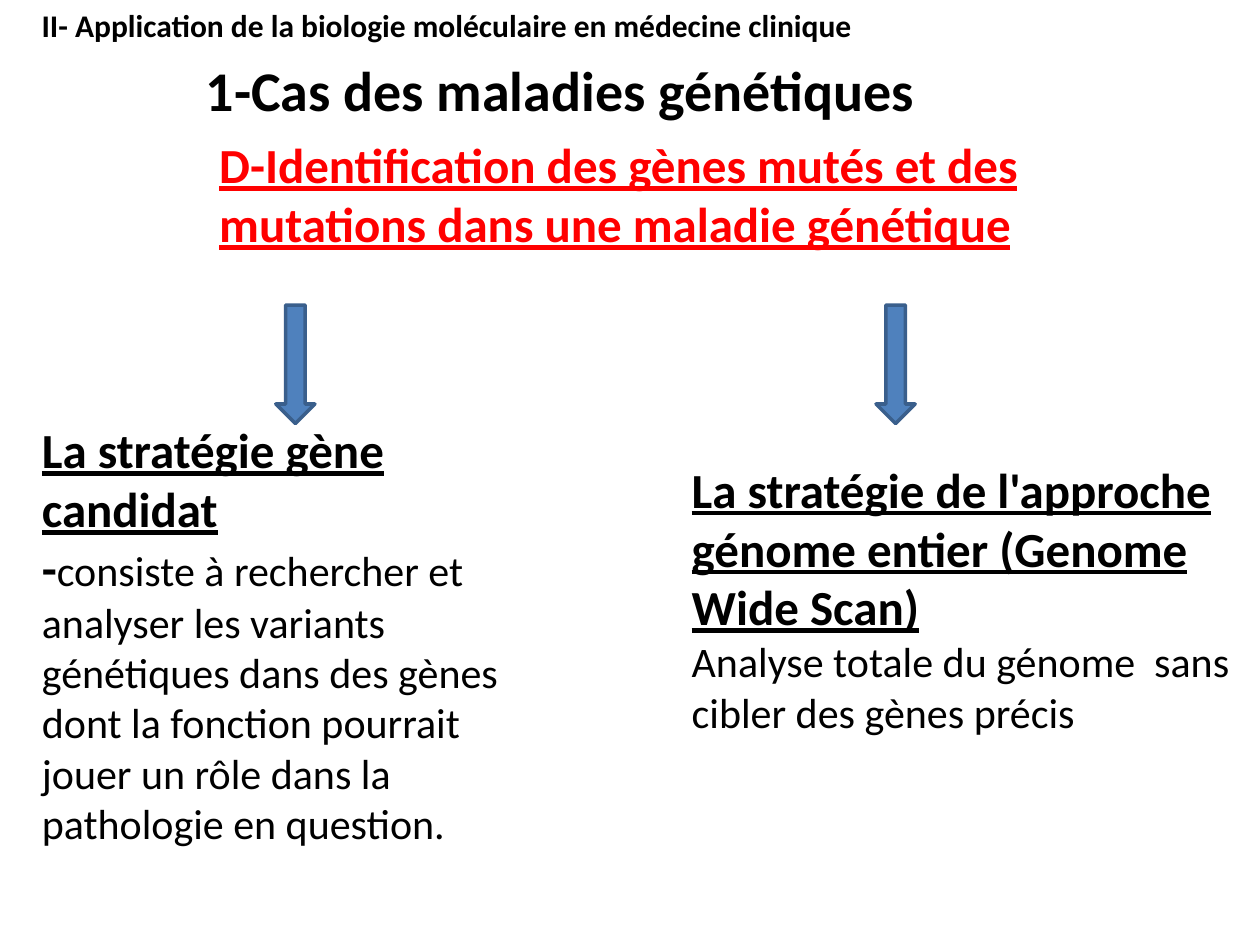
from dataclasses import dataclass

from lxml.etree import SubElement
from pptx import Presentation
from pptx.dml.color import RGBColor as Color
from pptx.enum.shapes import MSO_SHAPE as Preset
from pptx.enum.text import MSO_ANCHOR as Anchor, MSO_AUTO_SIZE as AutoSize, PP_ALIGN as Align
from pptx.oxml.ns import qn
from pptx.util import Cm, Pt


@dataclass(frozen=True)
class Theme:
    font: str = "Calibri"
    text: Color = Color(0x00, 0x00, 0x00)
    accent: Color = Color(0xFF, 0x00, 0x00)
    arrow_fill: Color = Color(0x4F, 0x81, 0xBD)
    arrow_line: Color = Color(0x3A, 0x5F, 0x8C)
    arrow_line_width: int = 2
    chapter_size: int = 18
    title_size: int = 32
    heading_size: int = 28
    body_size: int = 24


THEME = Theme()


def add_text(paragraph, text, size, color=THEME.text, bold=False, underline=False):
    run = paragraph.add_run()
    run.text = text
    font = run.font
    font.name = THEME.font
    font.size = Pt(size)
    font.color.rgb = color
    font.bold = bold
    font.underline = underline


class SlideBuilder:
    def __init__(self, presentation, theme):
        self.theme = theme
        self.slide = presentation.slides.add_slide(presentation.slide_layouts[3])

    def fill_frame(self, shape, paragraphs):
        frame = shape.text_frame
        frame.word_wrap = True
        frame.auto_size = AutoSize.NONE
        frame.vertical_anchor = Anchor.TOP
        for index, runs in enumerate(paragraphs):
            paragraph = frame.add_paragraph() if index else frame.paragraphs[0]
            paragraph.alignment = Align.LEFT
            paragraph.space_before = Pt(0)
            for text, style in runs:
                add_text(paragraph, text, **style)
        return frame

    def textbox(self, box, text, **style):
        shape = self.slide.shapes.add_textbox(*map(Cm, box))
        self.fill_frame(shape, [[(text, style)]])

    def placeholder(self, number, box, paragraphs):
        shape = self.slide.placeholders[number]
        shape.left, shape.top, shape.width, shape.height = map(Cm, box)
        return self.fill_frame(shape, paragraphs)

    def title(self, box, runs):
        self.placeholder(0, box, [runs])

    def body(self, number, box, heading, description):
        heading_style = dict(size=self.theme.heading_size, bold=True, underline=True)
        frame = self.placeholder(number, box, [[(heading, heading_style)], description])
        for paragraph in frame.paragraphs:
            properties = paragraph._p.get_or_add_pPr()
            properties.set("marL", "0")
            properties.set("indent", "0")
            SubElement(properties, qn("a:buNone"))

    def down_arrow(self, box):
        shape = self.slide.shapes.add_shape(Preset.DOWN_ARROW, *map(Cm, box))
        shape.shadow.inherit = False
        shape.fill.solid()
        shape.fill.fore_color.rgb = self.theme.arrow_fill
        shape.line.color.rgb = self.theme.arrow_line
        shape.line.width = Pt(self.theme.arrow_line_width)


def main():
    presentation = Presentation()
    presentation.slide_width = Cm(25.4)
    presentation.slide_height = Cm(19.05)
    builder = SlideBuilder(presentation, THEME)
    body_style = dict(size=THEME.body_size)

    builder.textbox(
        (0.59, 0, 20.65, 1.8),
        "II- Application de la biologie moléculaire en médecine clinique",
        size=THEME.chapter_size, bold=True,
    )
    builder.title((3.75, 1, 15.67, 1.62), [
        (" ", dict(size=THEME.chapter_size, bold=True)),
        ("1-Cas des maladies génétiques", dict(size=THEME.title_size, bold=True)),
    ])
    builder.textbox(
        (4.17, 2.59, 19.05, 2.65),
        "D-Identification des gènes mutés et des mutations dans une maladie génétique",
        size=THEME.heading_size, color=THEME.accent, bold=True, underline=True,
    )
    builder.body(1, (0.59, 8.33, 9.73, 10), "La stratégie gène candidat", [
        ("-", dict(size=THEME.heading_size, bold=True)),
        ("consiste à rechercher et analyser les variants génétiques dans des gènes "
         "dont la fonction pourrait jouer un rôle dans la pathologie en question.", body_style),
    ])
    builder.body(
        2, (13.69, 9.13, 11.71, 7.87),
        "La stratégie de l'approche génome entier (Genome Wide Scan)",
        [("Analyse totale du génome  sans cibler des gènes précis", body_style)],
    )
    for left in (5.56, 17.66):
        builder.down_arrow((left, 6.15, 0.79, 2.39))

    presentation.save("out.pptx")


if __name__ == "__main__":
    main()
